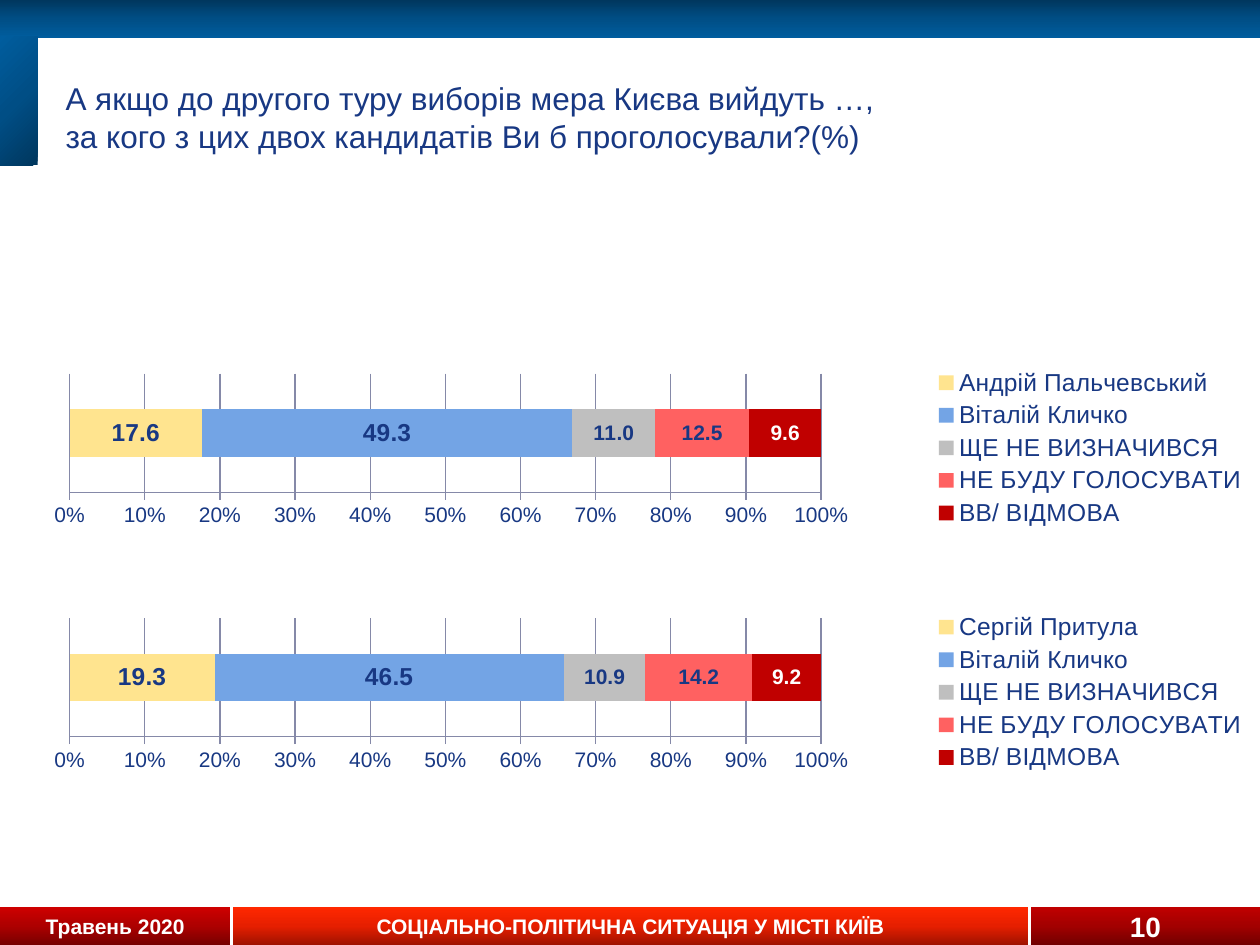
from dataclasses import dataclass
from typing import Any

from pptx import Presentation
from pptx.chart.data import CategoryChartData
from pptx.dml.color import RGBColor
from pptx.enum.chart import (XL_CHART_TYPE, XL_LABEL_POSITION,
                             XL_LEGEND_POSITION, XL_TICK_MARK)
from pptx.enum.shapes import MSO_SHAPE
from pptx.enum.text import MSO_ANCHOR, PP_ALIGN
from pptx.oxml import parse_xml
from pptx.oxml.ns import nsdecls
from pptx.util import Inches, Pt

NAVY, WHITE, GREY = "183883", "FFFFFF", "8589A8"
BLUES = ("00375E", "004E85", "005D9E")
STEP = 1.94


@dataclass
class Bar:
    left: float
    top: float
    width: float
    height: float
    stops: tuple[str, str, str]
    angle: int
    text: str = ""
    size: int = 12


@dataclass
class Part:
    name: str
    fill: str
    size: int = 12
    ink: str = NAVY


@dataclass
class Poll:
    rival: str
    shares: tuple[float, ...]


BARS = [
    Bar(0, 7.2, 1.83, 0.3, ("770000", "AD0000", "CE0000"), 270, "Травень 2020"),
    Bar(1.85, 7.2, 6.31, 0.3, ("A01200", "E61F00", "FF2800"), 270,
        "СОЦІАЛЬНО-ПОЛІТИЧНА СИТУАЦІЯ У МІСТІ КИЇВ"),
    Bar(0, 0, 10, 0.3, BLUES, 90),
    Bar(0, 0.29, 0.3, 1.02, BLUES, 225),
    Bar(8.18, 7.2, 1.82, 0.3, ("720000", "A20000", "C00000"), 270, "10", 16),
]
PARTS = [
    Part("Віталій Кличко", "73A4E5", 14),
    Part("ЩЕ НЕ ВИЗНАЧИВСЯ", "BFBFBF"),
    Part("НЕ БУДУ ГОЛОСУВАТИ", "FF6161"),
    Part("ВВ/ ВІДМОВА", "C00000", ink=WHITE),
]
POLLS = [
    Poll("Андрій Пальчевський", (17.6, 49.3, 11.0, 12.5, 9.6)),
    Poll("Сергій Притула", (19.3, 46.5, 10.9, 14.2, 9.2)),
]
TITLE = ("А якщо до другого туру виборів мера Києва вийдуть …,",
         "за кого з цих двох кандидатів Ви б проголосували?(%)")


def tint(code: str) -> RGBColor:
    return RGBColor.from_string(code)


def apply(thing: Any, **values: Any) -> None:
    for key, value in values.items():
        setattr(thing, key, value)


def style(font: Any, size: int, ink: str, bold: bool = False) -> None:
    apply(font, name="Arial", size=Pt(size), bold=bold)
    font.color.rgb = tint(ink)


def blend(shape: Any, stops: tuple[str, str, str], angle: int) -> None:
    marks = "".join(
        f'<a:gs pos="{spot * 50000}"><a:srgbClr val="{code}"/></a:gs>'
        for spot, code in enumerate(stops))
    shape._element.spPr.insert(2, parse_xml(
        f'<a:gradFill {nsdecls("a")} rotWithShape="1"><a:gsLst>{marks}</a:gsLst>'
        f'<a:lin ang="{angle * 60000}" scaled="0"/></a:gradFill>'))


def draw_bar(slide: Any, bar: Bar) -> None:
    shape = slide.shapes.add_shape(
        MSO_SHAPE.RECTANGLE, Inches(bar.left), Inches(bar.top),
        Inches(bar.width), Inches(bar.height))
    shape.shadow.inherit = False
    blend(shape, bar.stops, bar.angle)
    shape.line.fill.background()
    if bar.text:
        frame = shape.text_frame
        apply(frame, text=bar.text, vertical_anchor=MSO_ANCHOR.MIDDLE)
        line = frame.paragraphs[0]
        line.alignment = PP_ALIGN.CENTER
        style(line.runs[0].font, bar.size, WHITE, True)


def draw_title(slide: Any) -> None:
    box = slide.shapes.add_textbox(
        Inches(0.3), Inches(0.3), Inches(7.65), Inches(1.26))
    frame = box.text_frame
    apply(frame, word_wrap=True, vertical_anchor=MSO_ANCHOR.MIDDLE,
          margin_left=Inches(0.22))
    line = frame.paragraphs[0]
    for rank, text in enumerate(TITLE):
        if rank:
            line.add_line_break()
        run = line.add_run()
        run.text = text
        style(run.font, 18, NAVY)


def place_plot(chart: Any) -> None:
    sides = {"x": 0.034, "y": 0.094, "w": 0.61, "h": 0.649}
    modes = "".join(f'<c:{side}Mode val="edge"/>' for side in "xy")
    sizes = "".join(f'<c:{side} val="{value}"/>' for side, value in sides.items())
    area = chart._chartSpace.chart.plotArea
    for old in area.xpath("c:layout"):
        area.remove(old)
    area.insert(0, parse_xml(
        f'<c:layout {nsdecls("c")}><c:manualLayout><c:layoutTarget val="inner"/>'
        f'{modes}{sizes}</c:manualLayout></c:layout>'))


def draw_poll(slide: Any, poll: Poll, top: float) -> None:
    parts = [Part(poll.rival, "FFE48F", 14), *PARTS]
    data = CategoryChartData(number_format="###0.0")
    data.categories = ["1"]
    for part, share in zip(parts, poll.shares):
        data.add_series(part.name, [share])
    chart = slide.shapes.add_chart(
        XL_CHART_TYPE.BAR_STACKED_100, Inches(0.22), Inches(top),
        Inches(9.78), Inches(1.45), data).chart
    style(chart.font, 18, NAVY)
    apply(chart, has_title=False, has_legend=True)
    apply(chart.legend, position=XL_LEGEND_POSITION.RIGHT,
          include_in_layout=False)
    style(chart.legend.font, 14, NAVY)
    chart.category_axis.visible = False
    axis = chart.value_axis
    apply(axis, has_major_gridlines=True, major_tick_mark=XL_TICK_MARK.OUTSIDE,
          minimum_scale=0, maximum_scale=1, major_unit=0.1)
    apply(axis.tick_labels, number_format="0%", number_format_is_linked=False)
    style(axis.tick_labels.font, 12, NAVY)
    for line in (axis.format.line, axis.major_gridlines.format.line):
        line.width = Pt(0.75)
        line.color.rgb = tint(GREY)
    plot = chart.plots[0]
    apply(plot, gap_width=150, overlap=100, vary_by_categories=False)
    for part, row in zip(parts, plot.series):
        row.format.fill.solid()
        row.format.fill.fore_color.rgb = tint(part.fill)
        labels = row.data_labels
        apply(labels, show_value=True, position=XL_LABEL_POSITION.CENTER,
              number_format="###0.0", number_format_is_linked=False)
        style(labels.font, part.size, part.ink, True)
    place_plot(chart)


def main() -> None:
    deck = Presentation()
    apply(deck, slide_width=Inches(10), slide_height=Inches(7.5))
    slide = deck.slides.add_slide(deck.slide_layouts[6])
    for bar in BARS:
        draw_bar(slide, bar)
    draw_title(slide)
    for rank, poll in enumerate(POLLS):
        draw_poll(slide, poll, 2.83 + rank * STEP)
    deck.save("out.pptx")


if __name__ == "__main__":
    main()
